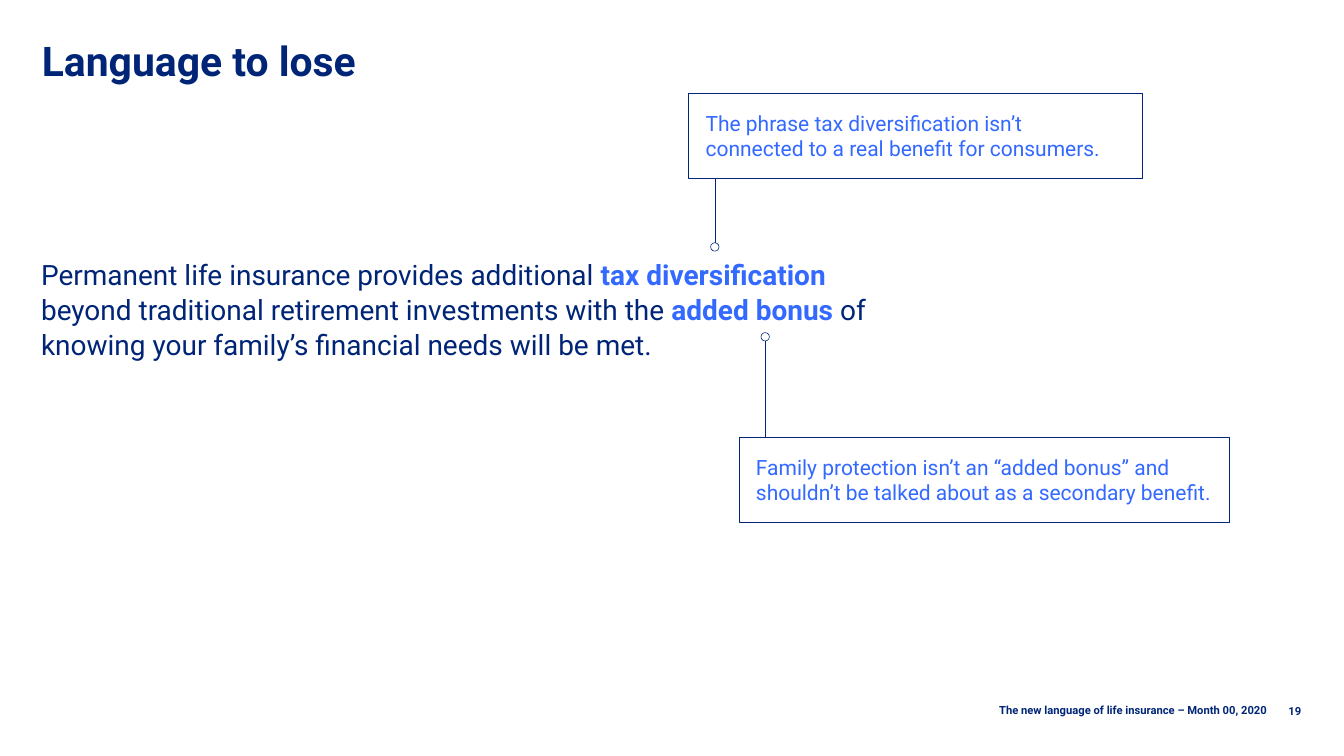
from dataclasses import dataclass

from lxml import etree
from pptx import Presentation
from pptx.dml.color import RGBColor
from pptx.enum.shapes import MSO_CONNECTOR, MSO_SHAPE
from pptx.enum.text import MSO_ANCHOR, PP_ALIGN
from pptx.oxml.ns import qn
from pptx.util import Inches, Pt

STRAIGHT = MSO_CONNECTOR.STRAIGHT
RECT, OVAL = MSO_SHAPE.RECTANGLE, MSO_SHAPE.OVAL
TOP, MIDDLE = MSO_ANCHOR.TOP, MSO_ANCHOR.MIDDLE
LEFT, RIGHT = PP_ALIGN.LEFT, PP_ALIGN.RIGHT


@dataclass(frozen=True)
class Theme:
    font: str = "Roboto"
    navy: RGBColor = RGBColor(0x00, 0x25, 0x77)
    footer_navy: RGBColor = RGBColor(0x00, 0x26, 0x77)
    blue: RGBColor = RGBColor(0x33, 0x69, 0xFF)
    white: RGBColor = RGBColor(0xFF, 0xFF, 0xFF)
    title: float = 35
    body: float = 24
    callout: float = 18
    footer: float = 9.6
    line: float = 0.5


def write(tf, runs, *, font, size, align=LEFT, anchor=TOP, spacing=None):
    tf.word_wrap = True
    tf.vertical_anchor = anchor
    p = tf.paragraphs[0]
    p.alignment = align
    if spacing:
        p.line_spacing = spacing
    for text, color, bold in runs:
        r = p.add_run()
        r.text = text
        r.font.name = font
        r.font.size = Pt(size)
        r.font.bold = bold
        r.font.color.rgb = color


class Deck:
    def __init__(self, slide, theme):
        self.s = slide
        self.t = theme

    def text(self, box, runs, size, **fmt):
        sp = self.s.shapes.add_textbox(*map(Inches, box))
        write(sp.text_frame, runs, font=self.t.font, size=size, **fmt)

    def shape(self, kind, box):
        sp = self.s.shapes.add_shape(kind, *map(Inches, box))
        sp.shadow.inherit = False
        sp.fill.solid()
        sp.fill.fore_color.rgb = self.t.white
        sp.line.color.rgb = self.t.navy
        sp.line.width = Pt(self.t.line)
        return sp

    def pointer(self, x, start, end, dot_y):
        cx = self.s.shapes.add_connector(STRAIGHT, *map(Inches, (x, start, x, end)))
        cx.line.color.rgb = self.t.navy
        cx.line.width = Pt(self.t.line)
        etree.SubElement(cx._element.spPr, qn("a:effectLst"))
        self.shape(OVAL, (x - 0.05, dot_y - 0.05, 0.1, 0.1))

    def callout(self, box, text):
        tf = self.shape(RECT, box).text_frame
        tf.margin_left = tf.margin_right = Inches(0.2)
        tf.margin_top = tf.margin_bottom = Inches(0.2)
        write(tf, [(text, self.t.blue, False)], font=self.t.font, size=self.t.callout)


def main():
    prs = Presentation()
    prs.slide_width, prs.slide_height = Inches(16), Inches(9)
    t = Theme()
    d = Deck(prs.slides.add_slide(prs.slide_layouts[6]), t)

    d.text((15.19, 8.33, 0.4, 0.19), [("19", t.footer_navy, True)], t.footer, align=RIGHT)
    d.text((9.78, 8.33, 5.4, 0.24),
           [("The new language of life insurance – Month 00, 2020", t.footer_navy, True)],
           t.footer, align=RIGHT, anchor=MIDDLE)
    d.text((0.39, 3, 10.05, 2.21), [
        ("Permanent life insurance provides additional ", t.navy, False),
        ("tax diversification ", t.blue, True),
        ("beyond traditional retirement investments with the ", t.navy, False),
        ("added bonus ", t.blue, True),
        ("of knowing your family’s financial needs will be met.", t.navy, False),
    ], t.body, spacing=Pt(30))
    d.text((0.4, 0.44, 11.6, 0.63), [("Language to lose", t.navy, True)], t.title, spacing=0.9)

    d.pointer(9.11, 5.21, 4.01, 4.01)
    d.callout((8.8, 5.21, 5.84, 1.01),
              "Family protection isn’t an “added bonus” and "
              "shouldn’t be talked about as a secondary benefit.")
    d.callout((8.2, 1.11, 5.4, 1.01),
              "The phrase tax diversification isn’t "
              "connected to a real benefit for consumers.")
    d.pointer(8.51, 2.12, 2.97, 2.94)

    prs.save("out.pptx")


if __name__ == "__main__":
    main()
